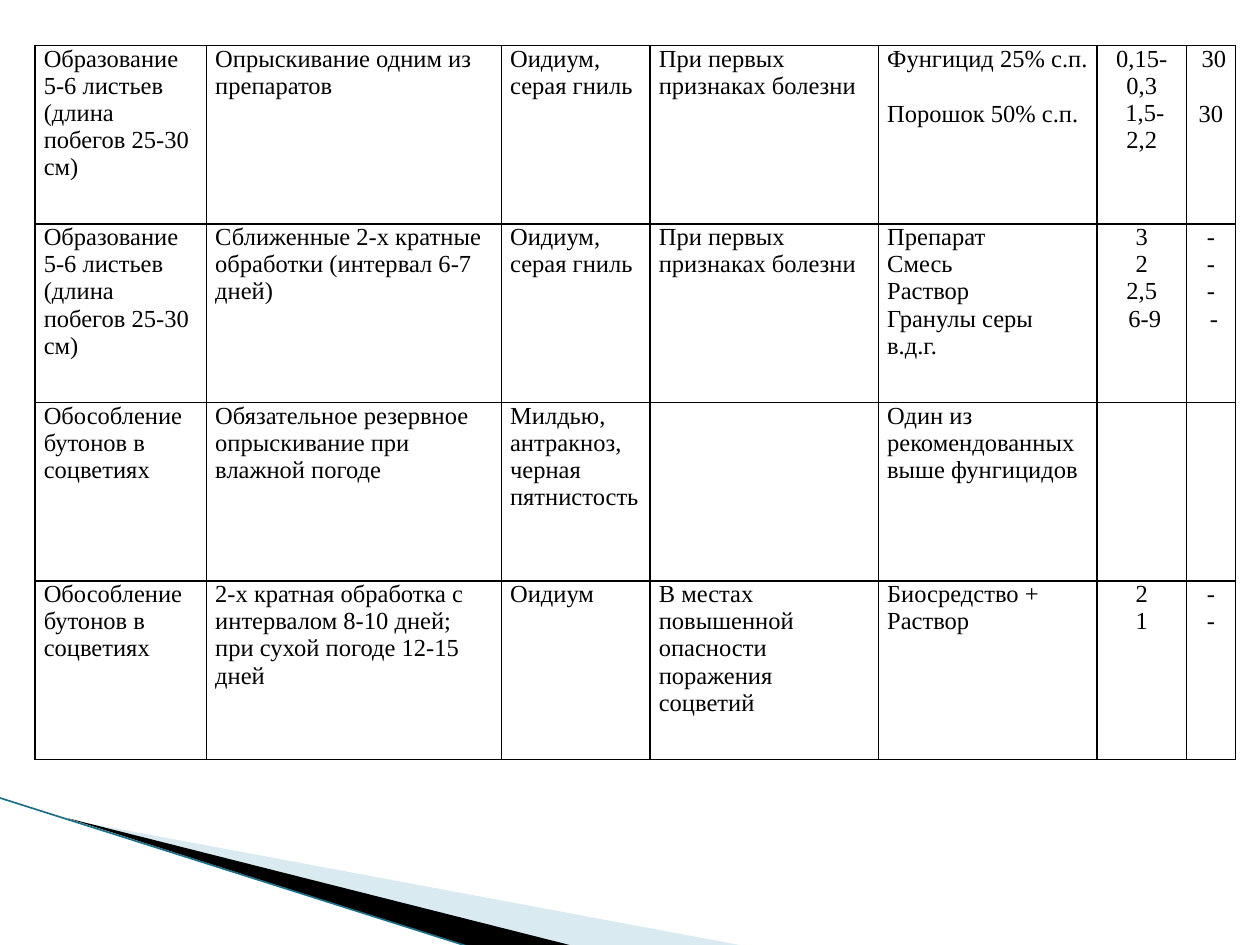
from lxml import etree
from pptx import Presentation
from pptx.dml.color import RGBColor
from pptx.enum import shapes, text
from pptx.oxml.ns import qn
from pptx.util import Pt

FONT = "Times New Roman"
FONT_SIZE = 14
LINE_HEIGHT = 16
INK = "000000"

COLUMN_WIDTHS = [98, 168.5, 85, 130.5, 125, 51, 28]
FIRST_CENTRED_COLUMN = 5

# Each cell is a list of paragraphs
LEAVES = ["Образование 5-6 листьев (длина побегов 25-30 см)"]
BUDS = ["Обособление бутонов в соцветиях"]
MILDEW_AND_ROT = ["Оидиум, серая гниль"]
FIRST_SIGNS = ["При первых признаках болезни"]
TREATMENTS = [
    [LEAVES, ["Опрыскивание одним из препаратов"], MILDEW_AND_ROT, FIRST_SIGNS,
     ["Фунгицид 25% с.п.", "Порошок 50% с.п."],
     ["0,15-", "0,3", " 1,5-2,2"], [" 30", "30"]],
    [LEAVES, ["Сближенные 2-х кратные обработки (интервал 6-7 дней)"],
     MILDEW_AND_ROT, FIRST_SIGNS,
     ["Препарат", "Смесь", "Раствор", "Гранулы серы в.д.г."],
     ["3", "2", "2,5", " 6-9"], ["-", "-", "-", " -"]],
    [BUDS, ["Обязательное резервное опрыскивание при влажной погоде"],
     ["Милдью, антракноз, черная пятнистость"], [],
     ["Один из рекомендованных выше фунгицидов"], [], []],
    [BUDS, ["2-х кратная обработка с интервалом 8-10 дней; при сухой погоде 12-15 дней"],
     ["Оидиум"], ["В местах повышенной опасности поражения соцветий"],
     ["Биосредство +", "Раствор"], ["2", "1"], ["-", "-"]],
]
# Cells (row, column) whose second paragraph stands one line lower
SPACED_CELLS = {(0, 4), (0, 6)}


def colour(value):
    return RGBColor.from_string(value)


def add_wedge(page, points, fill, opacity=100):
    start, *rest = [(Pt(x), Pt(y)) for x, y in points]
    builder = page.shapes.build_freeform(*start, scale=1.0)
    builder.add_line_segments(rest, close=True)
    wedge = builder.convert_to_shape()
    wedge.shadow.inherit = False
    wedge.line.fill.background()
    wedge.fill.solid()
    wedge.fill.fore_color.rgb = colour(fill)
    if opacity < 100:
        fill_colour = wedge.fill._xPr.find(".//" + qn("a:srgbClr"))
        etree.SubElement(fill_colour, qn("a:alpha"), val=str(opacity * 1000))


def add_corner_decoration(page, left, top, width, height):
    """Two wedges and an edge line sweeping down from the left."""
    right, bottom = left + width, top + height
    add_wedge(page, [(left + 40, top + 12.5), (right, bottom),
                     (left + 329, bottom)], "A0CBDC", opacity=40)
    add_wedge(page, [(left + 38.5, top + 11.5), (left + 329.5, bottom),
                     (left + 268, bottom)], INK)
    edge = page.shapes.add_connector(
        shapes.MSO_CONNECTOR.STRAIGHT,
        Pt(left), Pt(top), Pt(left + 268), Pt(bottom))
    edge.line.color.rgb = colour("1B7088")
    edge.line.width = Pt(0.95)
    etree.SubElement(edge._element.spPr, qn("a:effectLst"))


def set_borders(cell, line_colour, width):
    properties = cell._tc.get_or_add_tcPr()
    for index, side in enumerate(("lnL", "lnR", "lnT", "lnB")):
        line = etree.Element(qn("a:" + side), w=str(Pt(width)))
        fill = etree.SubElement(line, qn("a:solidFill"))
        etree.SubElement(fill, qn("a:srgbClr"), val=line_colour)
        properties.insert(index, line)


def fill_cell(cell, paragraphs, centred, spaced):
    cell.fill.background()
    set_borders(cell, INK, 1)
    cell.margin_left = cell.margin_right = Pt(5)
    cell.margin_top = cell.margin_bottom = 0
    cell.text_frame.text = "\n".join(paragraphs)
    for index, para in enumerate(cell.text_frame.paragraphs):
        if centred:
            para.alignment = text.PP_ALIGN.CENTER
        if spaced and index == 1:
            para.space_before = Pt(LINE_HEIGHT)
        para.font.size = Pt(FONT_SIZE)
        for span in para.runs:
            span.font.name = FONT
            span.font.size = Pt(FONT_SIZE)
            span.font.color.rgb = colour(INK)


def add_treatment_table(page, left, top, width, height):
    table = page.shapes.add_table(
        len(TREATMENTS), len(COLUMN_WIDTHS),
        Pt(left), Pt(top), Pt(width), Pt(height)).table
    table.first_row = table.horz_banding = False
    for column, column_width in zip(table.columns, COLUMN_WIDTHS):
        column.width = Pt(column_width)
    for row_index, row in enumerate(TREATMENTS):
        table.rows[row_index].height = Pt(height / len(TREATMENTS))
        for column_index, paragraphs in enumerate(row):
            fill_cell(table.cell(row_index, column_index), paragraphs,
                      centred=column_index >= FIRST_CENTRED_COLUMN,
                      spaced=(row_index, column_index) in SPACED_CELLS)


def main():
    deck = Presentation()
    deck.slide_width, deck.slide_height = Pt(720), Pt(540)
    page = deck.slides.add_slide(deck.slide_layouts[6])
    add_corner_decoration(page, 0, 456, 428, 85)
    add_treatment_table(page, 20, 26, sum(COLUMN_WIDTHS), 408)
    deck.save("out.pptx")


if __name__ == "__main__":
    main()
